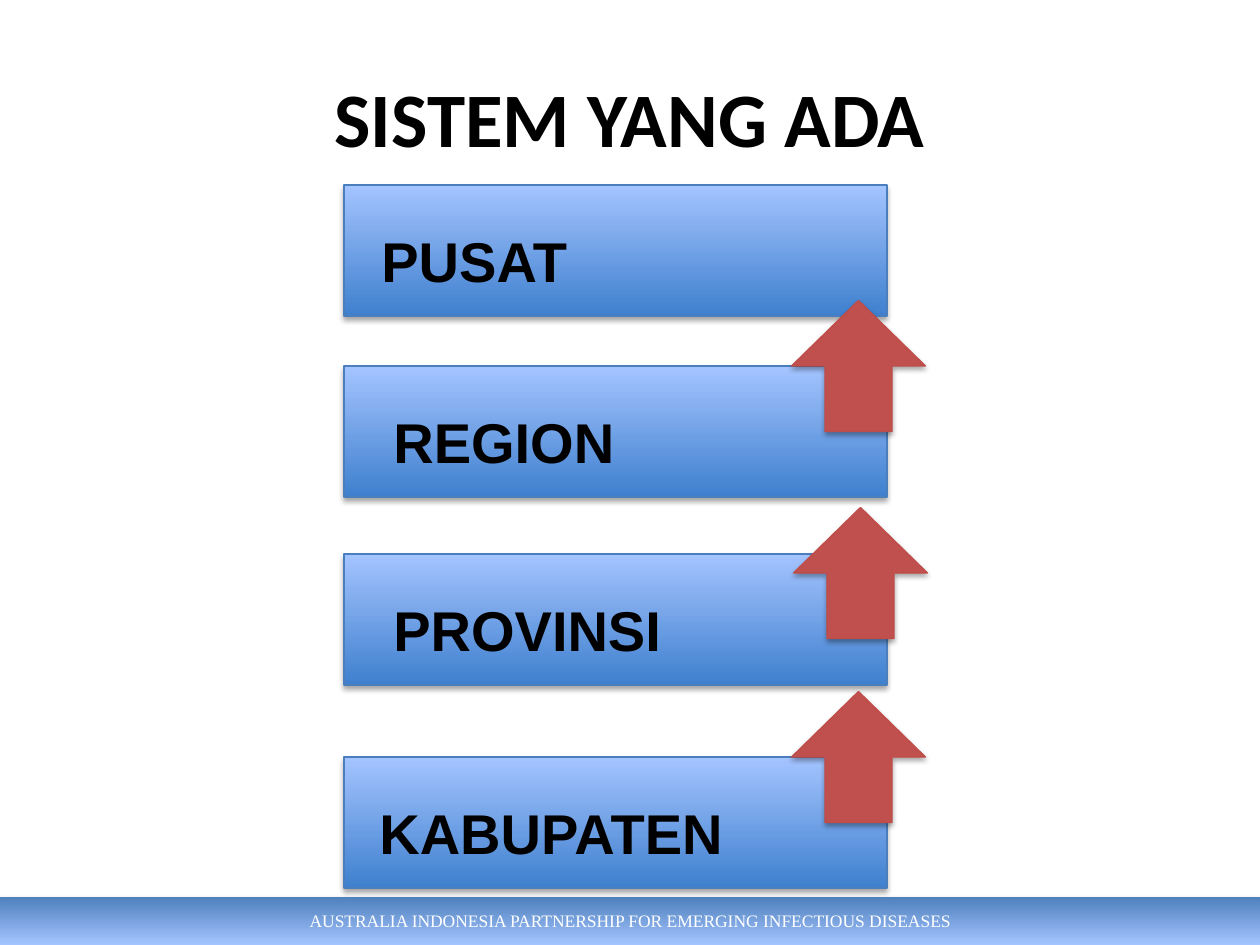
from lxml import etree
from pptx import Presentation
from pptx.dml.color import RGBColor
from pptx.enum.shapes import MSO_SHAPE as Shape
from pptx.enum.text import MSO_ANCHOR as Anchor, MSO_AUTO_SIZE as AutoSize, PP_ALIGN as Align
from pptx.oxml.ns import qn
from pptx.util import Emu, Pt

PX_PER_INCH = 126
SLIDE_WIDTH, SLIDE_HEIGHT = 1260, 945
BLACK, WHITE = "000000", "FFFFFF"
BOX_LEFT, BOX_WIDTH, BOX_HEIGHT = 344, 543, 131
LABEL_DROP, LABEL_WIDTH, LABEL_HEIGHT = 35, 494, 97
ARROW_LENGTH, ARROW_WIDTH = 131, 134

# Level name, top of its box, left of its label
LEVELS = [
    ("PUSAT", 185, 369),
    ("REGION", 366, 381),
    ("PROVINSI", 554, 381),
    ("KABUPATEN", 757, 367),
]
# Left and top of each arrow, from the lowest level up
ARROWS = [(793, 690), (795, 506), (793, 299)]


def px(length):
    return Emu(round(length * 914400 / PX_PER_INCH))


def color(hex_string):
    return RGBColor.from_string(hex_string)


class SlideBuilder:
    """Holds the style and the current slide."""

    def __init__(self, page):
        self.page = page

    def set_text(self, shape, text, font_name, size, text_color, bold=False,
                 align=Align.LEFT, anchor=Anchor.TOP):
        frame = shape.text_frame
        frame.word_wrap = True
        frame.vertical_anchor = anchor
        para = frame.paragraphs[0]
        para.text = text
        para.alignment = align
        para.font.name = font_name
        para.font.size = Pt(size)
        para.font.bold = bold
        para.font.color.rgb = color(text_color)

    def shadow(self, shape):
        shape.shadow.inherit = False
        effects = shape._element.spPr.find(qn("a:effectLst"))
        outer = etree.SubElement(effects, qn("a:outerShdw"), blurRad=str(Pt(3.1)),
                                 dist=str(Pt(1.8)), dir="5400000", rotWithShape="0")
        tint = etree.SubElement(outer, qn("a:srgbClr"), val=BLACK)
        etree.SubElement(tint, qn("a:alpha"), val="35000")

    def shape(self, kind, left, top, width, height, line=None):
        shape = self.page.shapes.add_shape(kind, px(left), px(top), px(width), px(height))
        self.shadow(shape)
        if line:
            shape.line.color.rgb = color(line)
            shape.line.width = Pt(0.75)
        else:
            shape.line.fill.background()
        return shape

    def gradient_box(self, left, top, width, height, stops, angle, line=None):
        box = self.shape(Shape.RECTANGLE, left, top, width, height, line)
        box.fill.gradient()
        box.fill.gradient_angle = angle
        for stop, stop_color in zip(box.fill.gradient_stops, stops):
            stop.color.rgb = color(stop_color)
        return box

    def arrow(self, left, top):
        arrow = self.shape(Shape.RIGHT_ARROW, left, top, ARROW_LENGTH, ARROW_WIDTH, "BF4C48")
        arrow.rotation = 270
        arrow.fill.solid()
        arrow.fill.fore_color.rgb = color("C0504D")

    def label(self, text, left, top):
        box = self.page.shapes.add_textbox(px(left), px(top), px(LABEL_WIDTH), px(LABEL_HEIGHT))
        self.set_text(box, text, "Arial", 32, BLACK, bold=True)
        box.text_frame.auto_size = AutoSize.SHAPE_TO_FIT_TEXT

    def title(self, text, left, top, width, height):
        title = self.page.shapes.title
        title.left, title.top = px(left), px(top)
        title.width, title.height = px(width), px(height)
        self.set_text(title, text, "Calibri", 44, BLACK, bold=True,
                      align=Align.CENTER, anchor=Anchor.MIDDLE)


def main():
    deck = Presentation()
    deck.slide_width, deck.slide_height = px(SLIDE_WIDTH), px(SLIDE_HEIGHT)
    builder = SlideBuilder(deck.slides.add_slide(deck.slide_layouts[5]))

    # Footer band
    band = builder.gradient_box(0, 897, SLIDE_WIDTH, 48, ("4F81BD", "A4C4FF"), 270)
    builder.set_text(band, "AUSTRALIA INDONESIA PARTNERSHIP FOR EMERGING INFECTIOUS DISEASES",
                     "Times New Roman", 10, WHITE, align=Align.CENTER, anchor=Anchor.MIDDLE)

    builder.title("SISTEM YANG ADA", 63, 38, 1134, 157)

    # Level boxes, then their labels
    for _, top, _ in LEVELS:
        builder.gradient_box(BOX_LEFT, top, BOX_WIDTH, BOX_HEIGHT,
                             ("3F80CE", "A4C4FF"), 90, "4B7EBC")
    for name, top, label_left in LEVELS:
        builder.label(name, label_left, top + LABEL_DROP)

    # Arrows from each level to the one above
    for left, top in ARROWS:
        builder.arrow(left, top)

    deck.save("out.pptx")


if __name__ == "__main__":
    main()
